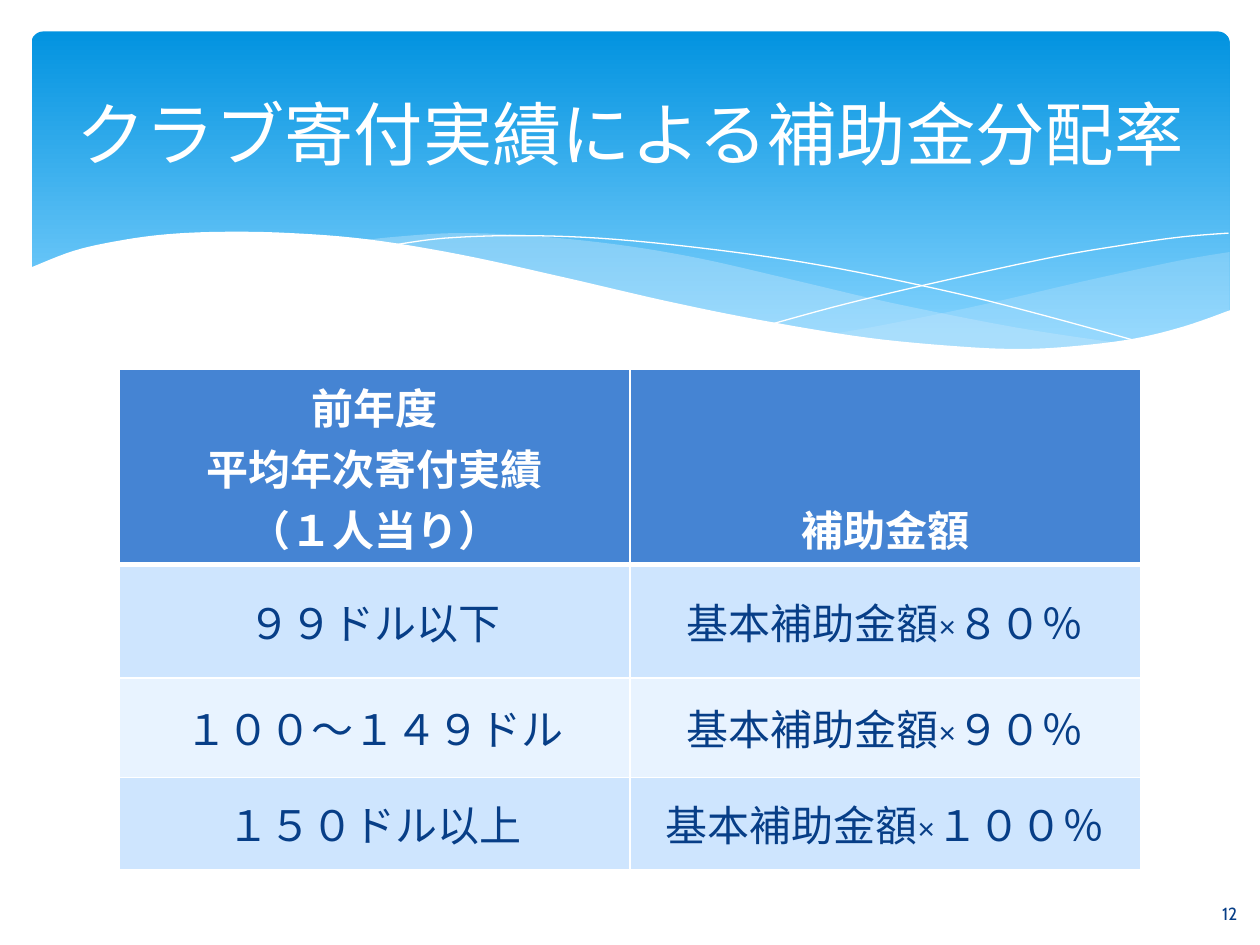
from lxml.etree import SubElement
from pptx import Presentation
from pptx.dml.color import RGBColor
from pptx.enum.shapes import MSO_SHAPE
from pptx.enum.text import MSO_ANCHOR, PP_ALIGN
from pptx.oxml.ns import qn
from pptx.util import Inches, Pt

FONT = "Cabin"
COLORS = {"white": "FFFFFF", "navy": "073E87", "sky_top": "0293E0",
          "sky_low": "83D3FE", "wave": "C6E7FC", "header": "4584D3",
          "band_dark": "CEE5FE", "band_light": "E8F3FF"}

# Content
TITLE = "クラブ寄付実績による補助金分配率"
PAGE = "12"
HEADERS = [["前年度", "平均年次寄付実績", "（１人当り）"], ["補助金額"]]
ROWS = [("９９ドル以下", "基本補助金額×８０％"),
        ("１００～１４９ドル", "基本補助金額×９０％"),
        ("１５０ドル以上", "基本補助金額×１００％")]
ROW_HEIGHTS = [1.5, 0.9, 0.79, 0.73]
COL_WIDTH = 4.05

# Waves: smooth edges given by a few points, in inches
RIGHT_TOP = [(9.76, 2), (9.35, 2.07), (8.61, 2.23), (7.79, 2.42), (7.06, 2.57), (6.61, 2.65)]
RIGHT_LOW = [(6.61, 2.65), (7.05, 2.71), (7.57, 2.76), (8.03, 2.78), (8.54, 2.76),
             (8.97, 2.7), (9.35, 2.62), (9.76, 2.47)]
MID_TOP = [(8.93, 2.73), (8.07, 2.6), (7.06, 2.4), (6.29, 2.22), (5.55, 2.05), (4.89, 1.94),
           (4.2, 1.87), (3.61, 1.85), (3.13, 1.88), (2.86, 1.91)]
MID_LOW = [(2.86, 1.91), (3.62, 2.03), (4.49, 2.22), (5.3, 2.4), (6.01, 2.55), (6.65, 2.66),
           (7.36, 2.75), (7.96, 2.78), (8.48, 2.77), (8.93, 2.73)]
LINE_DOWN = [(3.09, 1.95), (3.53, 1.89), (4.16, 1.87), (4.89, 1.9), (5.82, 2),
             (6.65, 2.13), (7.6, 2.33), (8.31, 2.51), (9.07, 2.72)]
LINE_UP = [(6.13, 2.57), (6.72, 2.41), (7.48, 2.23), (8.36, 2.04), (8.95, 1.94),
           (9.38, 1.88), (9.75, 1.85)]
FRONT_EDGE = [(9.77, 2.46), (9.4, 2.59), (8.99, 2.69), (8.5, 2.75), (8.09, 2.77), (7.61, 2.75),
              (6.88, 2.68), (6.03, 2.54), (5.29, 2.39), (4.47, 2.2), (3.65, 2.02), (2.92, 1.9),
              (2.3, 1.85), (1.77, 1.84), (1.32, 1.86), (0.95, 1.91), (0.59, 1.99), (0.23, 2.13)]


def rgb(name):
    return RGBColor.from_string(COLORS[name])


def smooth(points, steps=6):
    """Catmull-Rom curve through the points."""
    padded = [points[0], *points, points[-1]]
    curve = [points[0]]
    for a, b, c, d in zip(padded, padded[1:], padded[2:], padded[3:]):
        for k in range(1, steps + 1):
            t = k / steps
            curve.append(tuple(
                (2 * q + (r - p) * t + (2 * p - 5 * q + 4 * r - u) * t ** 2
                 + (3 * q - p - 3 * r + u) * t ** 3) / 2
                for p, q, r, u in zip(a, b, c, d)))
    return curve


def add_wave(shapes, points, fill=None, alpha=100):
    """Filled area, or a white hairline when there is no fill."""
    pts = [(Inches(x), Inches(y)) for x, y in points]
    builder = shapes.build_freeform(*pts[0], scale=1.0)
    builder.add_line_segments(pts[1:], close=fill is not None)
    sp = builder.convert_to_shape()
    sp.shadow.inherit = False
    if fill is None:
        sp.fill.background()
        sp.line.color.rgb = rgb("white")
        sp.line.width = Pt(0)
        return
    sp.fill.solid()
    sp.fill.fore_color.rgb = rgb(fill)
    sp.line.fill.background()
    if alpha < 100:
        color = sp.fill._xPr.find(qn("a:solidFill"))[0]
        SubElement(color, qn("a:alpha")).set("val", str(alpha * 1000))


def write(tf, lines, size, color, bold=False, spacing=None):
    for i, line in enumerate(lines):
        p = tf.paragraphs[0] if i == 0 else tf.add_paragraph()
        p.alignment = PP_ALIGN.CENTER
        if spacing:
            p.line_spacing = spacing
        r = p.add_run()
        r.text = line
        r.font.name, r.font.size, r.font.bold = FONT, Pt(size), bold
        r.font.color.rgb = rgb(color)


def style_cell(cell, fill, top, bottom):
    tcPr = cell._tc.get_or_add_tcPr()
    for side, width in (("L", 1), ("R", 1), ("T", top), ("B", bottom)):
        ln = SubElement(tcPr, qn(f"a:ln{side}"), w=str(Pt(width)))
        SubElement(SubElement(ln, qn("a:solidFill")), qn("a:srgbClr"), val=COLORS["white"])
    cell.fill.solid()
    cell.fill.fore_color.rgb = rgb(fill)


def main():
    prs = Presentation()
    prs.slide_width, prs.slide_height = Inches(10), Inches(7.5)
    s = prs.slides.add_slide(prs.slide_layouts[5])
    shapes = s.shapes

    # Banner
    sp = shapes.add_shape(MSO_SHAPE.ROUNDED_RECTANGLE, Inches(0.25), Inches(0.25),
                          Inches(9.51), Inches(2.7))
    sp.adjustments[0] = 0.034
    sp.shadow.inherit = False
    sp.line.fill.background()
    sp.fill.gradient()
    sp.fill.gradient_angle = 270
    for stop, pos, name in zip(sp.fill.gradient_stops, (0, 0.9), ("sky_top", "sky_low")):
        stop.position = pos
        stop.color.rgb = rgb(name)

    # Waves
    add_wave(shapes, smooth(RIGHT_TOP) + smooth(RIGHT_LOW), "wave", 29)
    add_wave(shapes, smooth(MID_TOP) + smooth(MID_LOW), "wave", 40)
    add_wave(shapes, smooth(LINE_DOWN))
    add_wave(shapes, smooth(LINE_UP))
    add_wave(shapes, smooth(FRONT_EDGE) + [(0.23, 3.29), (9.77, 3.29)], "white")

    # Table
    table = shapes.add_table(len(ROW_HEIGHTS), 2, Inches(0.95), Inches(2.93),
                             Inches(2 * COL_WIDTH), Inches(sum(ROW_HEIGHTS))).table
    for col in table.columns:
        col.width = Inches(COL_WIDTH)
    for row, height in zip(table.rows, ROW_HEIGHTS):
        row.height = Inches(height)
    for c, lines in enumerate(HEADERS):
        cell = table.cell(0, c)
        style_cell(cell, "header", 1, 3)
        # A single line sinks to the level of the last of three
        write(cell.text_frame, lines, 24, "white", True, 3 if len(lines) == 1 else None)
    for i, row in enumerate(ROWS, 1):
        for c, text in enumerate(row):
            cell = table.cell(i, c)
            style_cell(cell, "band_dark" if i % 2 else "band_light", 3 if i == 1 else 1, 1)
            cell.vertical_anchor = MSO_ANCHOR.MIDDLE
            write(cell.text_frame, [text], 24, "navy")

    # Title, in front of the banner
    title = shapes.title
    title.left, title.top = Inches(0.5), Inches(0.37)
    title.width, title.height = Inches(9), Inches(1.37)
    title.text_frame.vertical_anchor = MSO_ANCHOR.MIDDLE
    write(title.text_frame, [TITLE], 39.6, "white")
    shapes._spTree.append(title._element)

    # Page number
    tf = shapes.add_textbox(Inches(9.56), Inches(7.05), Inches(0.4), Inches(0.4)).text_frame
    tf.word_wrap = True
    tf.vertical_anchor = MSO_ANCHOR.MIDDLE
    write(tf, [PAGE], 10, "navy")

    prs.save("out.pptx")


if __name__ == "__main__":
    main()
